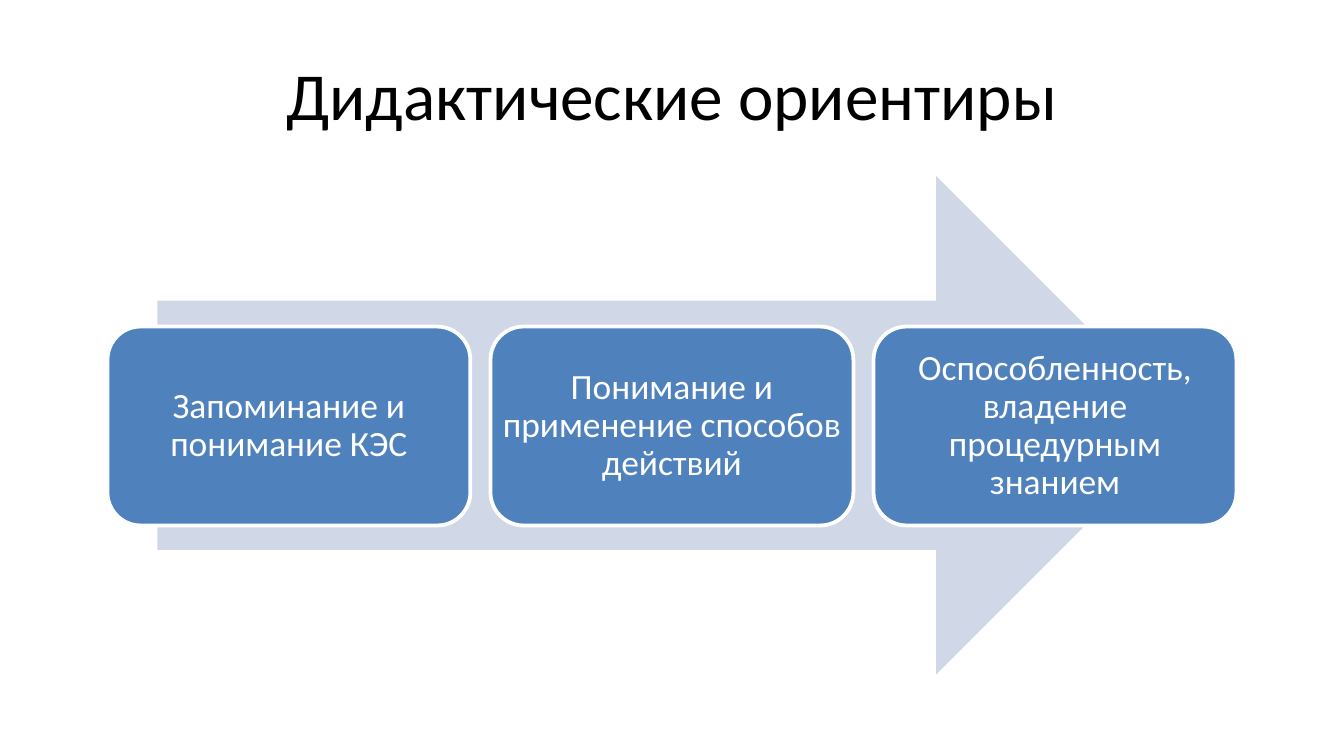
"""Build a slide with three didactic stages along a broad arrow."""
from typing import NamedTuple

from pptx import Presentation
from pptx.dml.color import RGBColor
from pptx.enum.shapes import MSO_SHAPE as Kind
from pptx.enum.text import MSO_ANCHOR as Anchor, PP_ALIGN as Align
from pptx.util import Inches, Pt


class Box(NamedTuple):
    left: float
    top: float
    width: float
    height: float


STAGES = (
    "Запоминание и понимание КЭС",
    "Понимание и применение способов действий",
    "Оспособленность, владение процедурным знанием",
)
FIRST = Box(0.8, 2.43, 2.7, 1.48)
GAP = 0.15


def paint(code: str) -> RGBColor:
    return RGBColor.from_string(code)


def place(box: Box) -> list[int]:
    return [Inches(side) for side in box]


def write(shape, text: str, *, size: float, color: str,
          inset: float = 0.1, pad: float = 0.05, space: float = 1.0) -> None:
    frame = shape.text_frame
    frame.word_wrap = True
    frame.vertical_anchor = Anchor.MIDDLE
    frame.margin_left = frame.margin_right = Inches(inset)
    frame.margin_top = frame.margin_bottom = Inches(pad)
    para = frame.paragraphs[0]
    para.text = text
    para.alignment = Align.CENTER
    para.line_spacing = space
    para.font.name = "Calibri"
    para.font.size = Pt(size)
    para.font.color.rgb = paint(color)


def draw(slide, kind: Kind, box: Box, fill: str, line: str | None = None):
    shape = slide.shapes.add_shape(kind, *place(box))
    shape.shadow.inherit = False
    shape.fill.solid()
    shape.fill.fore_color.rgb = paint(fill)
    if line:
        shape.line.color.rgb = paint(line)
        shape.line.width = Pt(2)
    else:
        shape.line.fill.background()
    return shape


def main() -> None:
    deck = Presentation()
    deck.slide_width = Inches(10)
    deck.slide_height = Inches(10 * 9 / 16)
    slide = deck.slides.add_slide(deck.slide_layouts[6])

    title = slide.shapes.add_textbox(*place(Box(0.5, 0.23, 9, 0.94)))
    write(title, "Дидактические ориентиры", size=36, color="000000")

    draw(slide, Kind.RIGHT_ARROW, Box(1.17, 1.31, 7.65, 3.71), "D0D8E8")
    for index, text in enumerate(STAGES):
        left = FIRST.left + index * (FIRST.width + GAP)
        card = draw(slide, Kind.ROUNDED_RECTANGLE, FIRST._replace(left=left),
                    "4F81BD", "FFFFFF")
        write(card, text, size=19, color="FFFFFF", inset=0.01, pad=0.01, space=0.9)

    deck.save("out.pptx")


if __name__ == "__main__":
    main()
